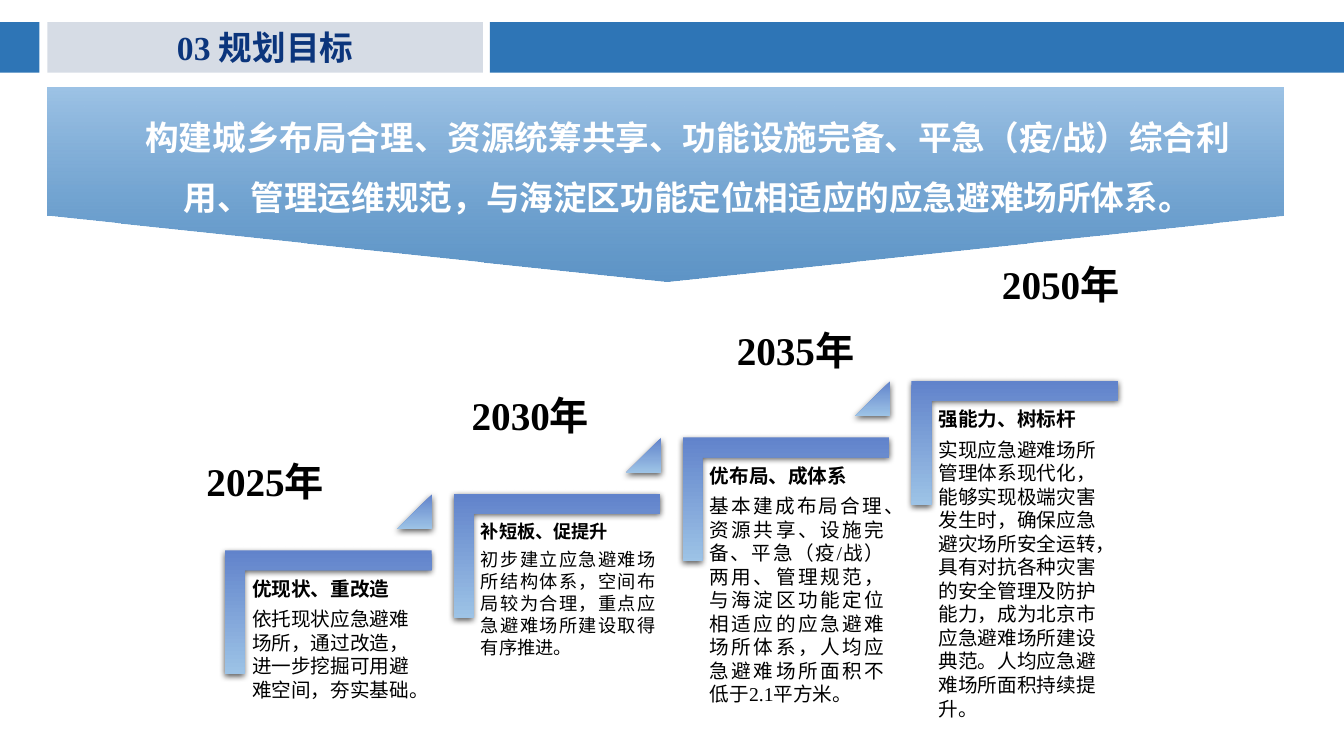
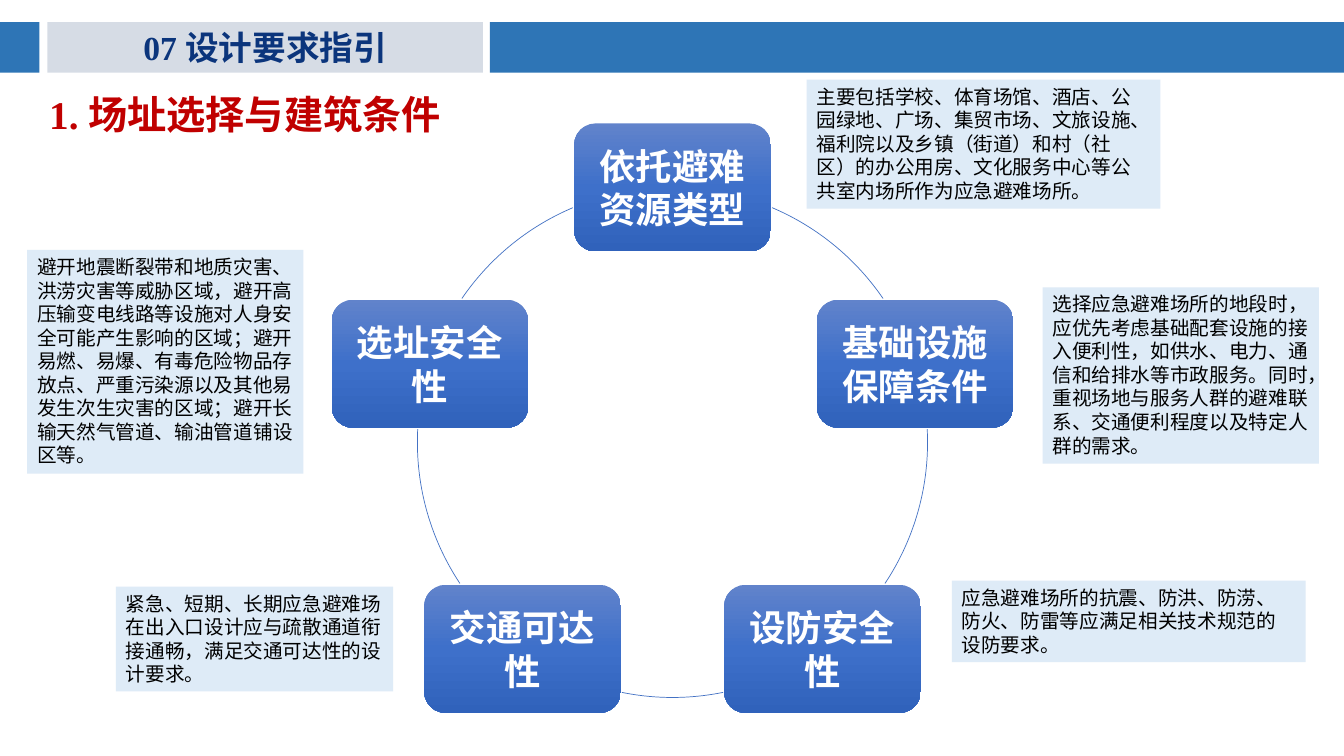
import math
from dataclasses import dataclass

from pptx import Presentation
from pptx import oxml as ox
from pptx.dml import color as dc
from pptx.enum import shapes as es, text as et
from pptx.oxml import ns
from pptx.util import Inches, Pt

SHAPE = es.MSO_SHAPE
ALIGN = et.PP_ALIGN
ANCHOR = et.MSO_ANCHOR
FIT = et.MSO_AUTO_SIZE


@dataclass(frozen=True)
class Theme:
    font: str = "Times New Roman"
    band: str = "2E75B6"
    tab: str = "D6DCE5"
    title: str = "0B357C"
    heading: str = "C00000"
    ink: str = "000000"
    white: str = "FFFFFF"
    note: str = "DEEBF7"
    ring: str = "4472C4"
    step_fill: tuple = ((0, "6183CB", 100), (100, "9DC3E6", 100))
    node_fill: tuple = ((0, "6183CB", 100), (50, "3E70CA", 100), (100, "3062BB", 100))
    goal_fill: tuple = ((0, "2E75B6", 77), (100, "9DC3E6", 100))
    title_size: int = 24
    heading_size: int = 28
    node_size: int = 26
    body_size: int = 14


def apply(target, values):
    for name, value in values.items():
        setattr(target, name, value)


class Deck:
    def __init__(self, theme):
        self.theme = theme
        self.prs = Presentation()
        apply(self.prs, {"slide_width": Inches(13.33), "slide_height": Inches(7.5)})
        self.s = None

    def new_slide(self, title):
        t = self.theme
        self.s = self.prs.slides.add_slide(self.prs.slide_layouts[6])
        tab = self.shape(SHAPE.RECTANGLE, (0.47, 0.22, 4.32, 0.5), t.tab)
        self.fill_text(tab, [title], t.title_size, t.title, bold=True,
                       para={"alignment": ALIGN.CENTER})
        for left, width in ((0, 0.39), (4.86, 8.47)):
            self.shape(SHAPE.RECTANGLE, (left, 0.22, width, 0.5), t.band)

    def shape(self, kind, box, fill=None, angle=0, rotation=0, adjust=()):
        sp = self.s.shapes.add_shape(kind, *map(Inches, box))
        sp.rotation = rotation
        for i, value in enumerate(adjust):
            sp.adjustments[i] = value
        if isinstance(fill, tuple):
            self.gradient(sp, fill, angle)
        elif fill:
            sp.fill.solid()
            sp.fill.fore_color.rgb = dc.RGBColor.from_string(fill)
        else:
            sp.fill.background()
        sp.line.fill.background()
        sp.shadow.inherit = False
        return sp

    def gradient(self, sp, stops, angle):
        marks = "".join(
            f'<a:gs pos="{pos * 1000}"><a:srgbClr val="{rgb}">'
            f'<a:alpha val="{alpha * 1000}"/></a:srgbClr></a:gs>'
            for pos, rgb, alpha in stops)
        grad = ox.parse_xml(
            f'<a:gradFill {ns.nsdecls("a")} rotWithShape="1"><a:gsLst>{marks}</a:gsLst>'
            f'<a:lin ang="{angle * 60000}" scaled="0"/></a:gradFill>')
        sp._element.spPr.find(ns.qn("a:prstGeom")).addnext(grad)

    def drop_shadow(self, sp):
        effects = sp._element.spPr.find(ns.qn("a:effectLst"))
        effects.append(ox.parse_xml(
            f'<a:outerShdw {ns.nsdecls("a")} blurRad="{Pt(4.5)}" dist="{Pt(1.5)}" '
            f'dir="5400000" rotWithShape="0"><a:srgbClr val="{self.theme.ink}">'
            '<a:alpha val="63000"/></a:srgbClr></a:outerShdw>'))

    def fill_text(self, sp, lines, size, color, bold=False, inset=None,
                  anchor=ANCHOR.TOP, fit=FIT.SHAPE_TO_FIT_TEXT, para=None):
        tf = sp.text_frame
        apply(tf, {"word_wrap": True, "auto_size": fit, "vertical_anchor": anchor})
        if inset is not None:
            sides = ("left", "top", "right", "bottom")
            apply(tf, {f"margin_{side}": Inches(inset) for side in sides})
        for i, line in enumerate(lines):
            p = tf.add_paragraph() if i else tf.paragraphs[0]
            apply(p, {"alignment": ALIGN.LEFT, **(para or {})})
            r = p.add_run()
            r.text = line
            apply(r.font, {"name": self.theme.font, "size": Pt(size),
                           "bold": bold and i == 0})
            r.font.color.rgb = dc.RGBColor.from_string(color)
        return tf

    def text(self, box, lines, size, color, **style):
        sp = self.s.shapes.add_textbox(*map(Inches, box))
        return self.fill_text(sp, lines, size, color, **style)

    def heading(self, line):
        t = self.theme
        tf = self.text((0, 0.92, 10.34, 0.49), [line], t.heading_size, t.heading, bold=True,
                       para={"alignment": ALIGN.JUSTIFY, "line_spacing": Pt(28)})
        tf.paragraphs[0]._p.get_or_add_pPr().set("indent", str(Inches(0.39)))

    def goal(self, line):
        t = self.theme
        self.shape(SHAPE.PENTAGON, (5.64, -4.3, 1.92, 12.26), t.goal_fill,
                   angle=180, rotation=90, adjust=(0.34,))
        self.text((1.18, 0.91, 11.28, 1.24), [line], t.title_size, t.white, bold=True,
                  para={"alignment": ALIGN.CENTER, "line_spacing": 1.5})

    def step(self, i, year, lines, size, align, last):
        t = self.theme
        x, y = 2.27 * i, -0.56 * i
        self.drop_shadow(self.shape(SHAPE.CORNER, (2.64 + x, 5.05 + y, 1.23, 2.05),
                                    t.step_fill, rotation=90, adjust=(0.16, 0.16)))
        self.text((2.44 + x, 5.66 + y, 1.85, 1.63), lines, size, t.ink, bold=True,
                  inset=0.06, fit=FIT.NONE,
                  para={"alignment": align, "space_after": Pt(size * 0.35)})
        if not last:
            self.drop_shadow(self.shape(SHAPE.ISOSCELES_TRIANGLE,
                                        (3.94 + x, 4.9 + y, 0.35, 0.35),
                                        t.step_fill, angle=90, adjust=(1,)))
        self.text((1.84 + 2.63 * i, 4.44 - 0.65 * i, 1.58, 0.66), [year],
                  t.heading_size, t.ink, bold=True, anchor=ANCHOR.MIDDLE, fit=FIT.NONE,
                  para={"alignment": ALIGN.CENTER})

    def node(self, center, line):
        t = self.theme
        width, height = 1.95, 1.27
        box = (center[0] - width / 2, center[1] - height / 2, width, height)
        sp = self.shape(SHAPE.ROUNDED_RECTANGLE, box, t.node_fill, angle=90)
        self.fill_text(sp, [line], t.node_size, t.white, bold=True, inset=0.11,
                       anchor=ANCHOR.MIDDLE, fit=FIT.NONE,
                       para={"alignment": ALIGN.CENTER})

    def arc(self, center, radius, start, end):
        box = (center[0] - radius, center[1] - radius, 2 * radius, 2 * radius)
        sp = self.shape(SHAPE.ARC, box, adjust=(start * 0.6, end * 0.6))
        sp.line.color.rgb = dc.RGBColor.from_string(self.theme.ring)
        sp.line.width = Pt(0.5)

    def note(self, box, line):
        t = self.theme
        self.fill_text(self.shape(SHAPE.RECTANGLE, box, t.note), [line], t.body_size, t.ink)


GOAL = "构建城乡布局合理、资源统筹共享、功能设施完备、平急（疫/战）综合利用、管理运维规范，与海淀区功能定位相适应的应急避难场所体系。"

STEPS = [
    ("2025年", "优现状、重改造",
     "依托现状应急避难场所，通过改造，进一步挖掘可用避难空间，夯实基础。",
     14, ALIGN.LEFT),
    ("2030年", "补短板、促提升",
     "初步建立应急避难场所结构体系，空间布局较为合理，重点应急避难场所建设取得有序推进。",
     13, ALIGN.JUSTIFY),
    ("2035年", "优布局、成体系",
     "基本建成布局合理、资源共享、设施完备、平急（疫/战）两用、管理规范，与海淀区功能定位相适应的应急避难场所体系，人均应急避难场所面积不低于2.1平方米。",
     14, ALIGN.JUSTIFY),
    ("2050年", "强能力、树标杆",
     "实现应急避难场所管理体系现代化，能够实现极端灾害发生时，确保应急避灾场所安全运转，具有对抗各种灾害的安全管理及防护能力，成为北京市应急避难场所建设典范。人均应急避难场所面积持续提升。",
     14, ALIGN.LEFT),
]

CONDITIONS = [
    ("依托避难资源类型", (293, 325.65), (8, 0.79, 3.51, 1.28),
     "主要包括学校、体育场馆、酒店、公园绿地、广场、集贸市场、文旅设施、福利院以及乡镇（街道）和村（社区）的办公用房、文化服务中心等公共室内场所作为应急避难场所。"),
    ("基础设施保障条件", (357.02, 33.58), (10.34, 2.85, 2.74, 1.75),
     "选择应急避难场所的地段时，应优先考虑基础配套设施的接入便利性，如供水、电力、通信和给排水等市政服务。同时，重视场地与服务人群的避难联系、交通便利程度以及特定人群的需求。"),
    ("设防安全性", (78.56, 101.44), (9.44, 5.76, 3.51, 0.81),
     "应急避难场所的抗震、防洪、防涝、防火、防雷等应满足相关技术规范的设防要求。"),
    ("交通可达性", (146.42, 182.98), (1.15, 5.82, 2.75, 1.04),
     "紧急、短期、长期应急避难场在出入口设计应与疏散通道衔接通畅，满足交通可达性的设计要求。"),
    ("选址安全性", (214.35, 247), (0.27, 2.48, 2.74, 2.22),
     "避开地震断裂带和地质灾害、洪涝灾害等威胁区域，避开高压输变电线路等设施对人身安全可能产生影响的区域；避开易燃、易爆、有毒危险物品存放点、严重污染源以及其他易发生次生灾害的区域；避开长输天然气管道、输油管道铺设区等。"),
]


def build_goals(deck):
    deck.new_slide("03 规划目标")
    for i, (year, title, body, size, align) in enumerate(STEPS):
        deck.step(i, year, [title, body], size, align, last=i == len(STEPS) - 1)
    deck.goal(GOAL)


def build_conditions(deck):
    deck.new_slide("07 设计要求指引")
    deck.heading("1. 场址选择与建筑条件")
    center, radius = (6.67, 4.39), 2.53
    for i, (name, arc, box, detail) in enumerate(CONDITIONS):
        turn = math.radians(360 / len(CONDITIONS) * i - 90)
        deck.node((center[0] + radius * math.cos(turn),
                   center[1] + radius * math.sin(turn)), name)
        deck.arc(center, radius, *arc)
        deck.note(box, detail)


def main():
    deck = Deck(Theme())
    build_goals(deck)
    build_conditions(deck)
    deck.prs.save("out.pptx")


if __name__ == "__main__":
    main()
